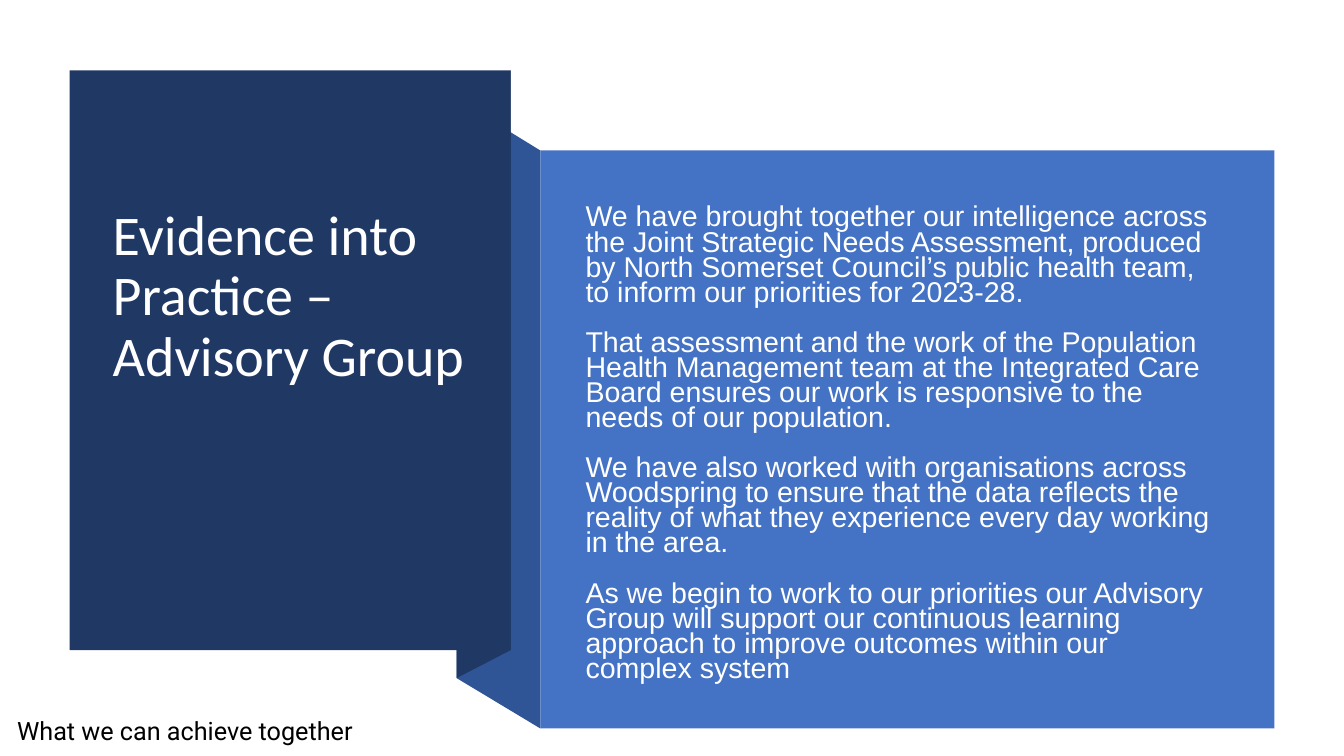
import pptx
import pptx.dml.color
import pptx.enum.shapes
import pptx.enum.text
import pptx.util

COLORS = {
    "title_panel": "203864",
    "fold": "2F5597",
    "body_panel": "4472C4",
    "light_text": "FFFFFF",
    "dark_text": "000000",
}
SLIDE_WIDTH = pptx.util.Inches(13.33)
SLIDE_HEIGHT = pptx.util.Inches(7.5)

TITLE_LEFT, FOLD_LEFT, TITLE_RIGHT, BODY_LEFT, BODY_RIGHT = 5.18, 33.98, 38, 40.2, 94.82
TITLE_TOP, FOLD_TOP, BODY_TOP = 9.33, 13.1, 19.9
TITLE_BOTTOM, FOLD_BOTTOM, BODY_BOTTOM = 86, 89.7, 96.35

TITLE = "Evidence into Practice – Advisory Group"
STATEMENTS = [
    "We have brought together our intelligence across the Joint Strategic Needs Assessment, "
    "produced by North Somerset Council’s public health team, to inform our priorities for 2023-28.",
    "That assessment and the work of the Population Health Management team at the Integrated "
    "Care Board ensures our work is responsive to the needs of our population.",
    "We have also worked with organisations across Woodspring to ensure that the data reflects "
    "the reality of what they experience every day working in the area.",
    "As we begin to work to our priorities our Advisory Group will support our continuous "
    "learning approach to improve outcomes within our complex system",
]
TAGLINE = "What we can achieve together"


def across(percent):
    return round(SLIDE_WIDTH * percent / 100)


def down(percent):
    return round(SLIDE_HEIGHT * percent / 100)


def rgb(color):
    return pptx.dml.color.RGBColor.from_string(COLORS[color])


def paint(surface, color):
    surface.fill.solid()
    surface.fill.fore_color.rgb = rgb(color)
    surface.line.fill.background()
    surface.shadow.inherit = False


def add_fold(slide, corners, color):
    points = [(across(x), down(y)) for x, y in corners]
    outline = slide.shapes.build_freeform(*points[0])
    outline.add_line_segments(points[1:], close=True)
    paint(outline.convert_to_shape(), color)


def add_panel(slide, left, top, right, bottom, color):
    panel = slide.shapes.add_shape(
        pptx.enum.shapes.MSO_SHAPE.RECTANGLE,
        across(left), down(top), across(right - left), down(bottom - top))
    paint(panel, color)


def add_text(slide, box, paragraphs, font, size, color, spacing, gap=0, centred=True):
    left, top, width, height = box
    frame = slide.shapes.add_textbox(
        across(left), down(top), across(width), down(height)).text_frame
    frame.word_wrap = True
    anchors = pptx.enum.text.MSO_ANCHOR
    frame.vertical_anchor = anchors.MIDDLE if centred else anchors.TOP
    for index, wording in enumerate(paragraphs):
        paragraph = frame.add_paragraph() if index else frame.paragraphs[0]
        paragraph.text = wording
        paragraph.line_spacing = spacing
        paragraph.space_before = pptx.util.Pt(gap if index else 0)
        paragraph.font.name = font
        paragraph.font.size = pptx.util.Pt(size)
        paragraph.font.color.rgb = rgb(color)
    return frame


def main():
    deck = pptx.Presentation()
    deck.slide_width = SLIDE_WIDTH
    deck.slide_height = SLIDE_HEIGHT
    slide = deck.slides.add_slide(deck.slide_layouts[6])

    add_fold(slide, [(BODY_LEFT, BODY_BOTTOM), (FOLD_LEFT, FOLD_BOTTOM),
                     (FOLD_LEFT, FOLD_TOP), (BODY_LEFT, BODY_TOP)], "fold")
    add_fold(slide, [(TITLE_RIGHT, TITLE_BOTTOM), (FOLD_LEFT, FOLD_BOTTOM),
                     (FOLD_LEFT, FOLD_TOP), (TITLE_RIGHT, TITLE_TOP)], "title_panel")
    add_panel(slide, TITLE_LEFT, TITLE_TOP, TITLE_RIGHT, TITLE_BOTTOM, "title_panel")
    title = add_text(slide, (7.65, 14.27, 27.83, 66.53), [TITLE],
                     "Calibri", 40, "light_text", 0.9)
    title.margin_bottom = down(17)

    add_panel(slide, BODY_LEFT, BODY_TOP, BODY_RIGHT, BODY_BOTTOM, "body_panel")
    add_text(slide, (42.83, 25.07, 48.84, 67.6), STATEMENTS,
             "Arial", 20.4, "light_text", 0.73, gap=18)
    add_text(slide, (0.53, 94.4, 50.04, 5.07), [TAGLINE],
             "Roboto", 18, "dark_text", 0.9, centred=False)
    deck.save("out.pptx")


if __name__ == "__main__":
    main()
